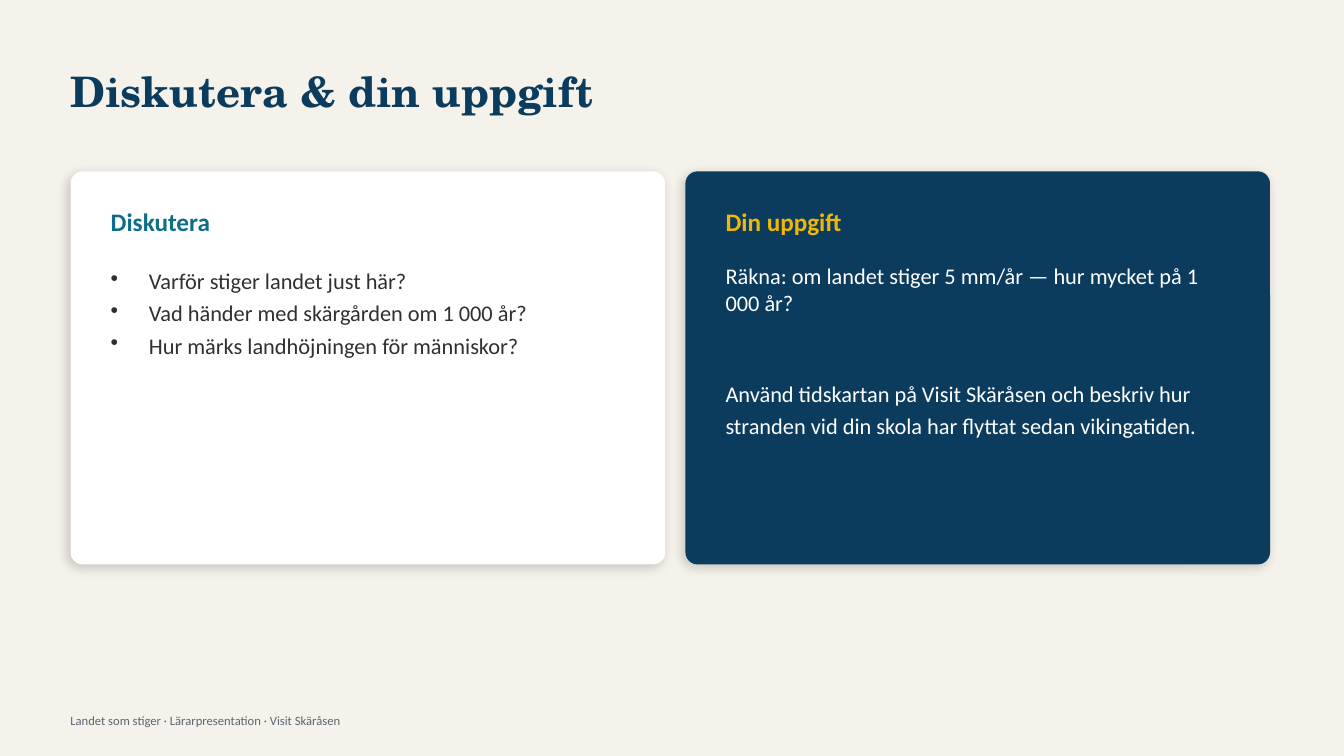
import pptx
import pptx.util
import pptx.dml.color
import pptx.enum.shapes
import pptx.enum.text
from lxml import etree
from pptx.oxml.ns import qn

Pt = pptx.util.Pt
MIDDLE = pptx.enum.text.MSO_ANCHOR.MIDDLE
TOP = pptx.enum.text.MSO_ANCHOR.TOP

COLORS = {
    "sand": "F5F2EB", "navy": "0B3C5D", "white": "FFFFFF", "teal": "0E6E8A",
    "ink": "2F3030", "yellow": "F2B705", "grey": "5B6573", "shadow": "000000",
}
BULLET_INDENT = 27.36


def color(name):
    return pptx.dml.color.RGBColor.from_string(COLORS[name])


def add_bullet(paragraph):
    properties = paragraph._p.get_or_add_pPr()
    properties.set("marL", str(Pt(BULLET_INDENT)))
    properties.set("indent", str(-Pt(BULLET_INDENT)))
    etree.SubElement(properties, qn("a:buChar"), char="•")


def add_text(slide, box, lines, size, color_name, font="Calibri", bold=False,
             anchor=MIDDLE, spacing=None, bullets=False):
    """Add a text box with one paragraph per line and return its paragraphs."""
    frame = slide.shapes.add_textbox(*map(Pt, box)).text_frame
    frame.word_wrap = True
    frame.vertical_anchor = anchor
    frame.text = "\n".join(lines)
    for paragraph in frame.paragraphs:
        if bullets:
            add_bullet(paragraph)
        if spacing:
            paragraph.line_spacing = spacing
        paragraph.font.name = font
        paragraph.font.size = Pt(size)
        paragraph.font.bold = bold
        paragraph.font.color.rgb = color(color_name)
    return frame.paragraphs


def add_soft_shadow(shape):
    shape.shadow.inherit = False
    effects = shape._element.spPr.find(qn("a:effectLst"))
    shadow = etree.SubElement(
        effects, qn("a:outerShdw"), blurRad=str(Pt(8)), dist=str(Pt(3)),
        dir=str(135 * 60000), algn="bl", rotWithShape="0")
    tint = etree.SubElement(shadow, qn("a:srgbClr"), val=COLORS["shadow"])
    etree.SubElement(tint, qn("a:alpha"), val="18000")


def add_card(slide, box, fill, heading, heading_color, lines, text_color,
             bullets=False):
    """Add a rounded card with a heading and body; return body paragraphs."""
    left, top, width, height = box
    card = slide.shapes.add_shape(
        pptx.enum.shapes.MSO_SHAPE.ROUNDED_RECTANGLE, *map(Pt, box))
    card.adjustments[0] = 0.031
    card.fill.solid()
    card.fill.fore_color.rgb = color(fill)
    card.line.fill.background()
    add_soft_shadow(card)

    inner_left, inner_width = left + 21.6, width - 43.2
    add_text(slide, (inner_left, top + 18, inner_width, 36), [heading],
             18, heading_color, bold=True)
    return add_text(slide, (inner_left, top + 61.2, inner_width, height - 75),
                    lines, 16, text_color, anchor=TOP, spacing=1.2,
                    bullets=bullets)


def add_discussion(slide, box):
    add_card(slide, box, "white", "Diskutera", "teal", [
        "Varför stiger landet just här?",
        "Vad händer med skärgården om 1 000 år?",
        "Hur märks landhöjningen för människor?",
    ], "ink", bullets=True)


def add_task(slide, box):
    calculation, shoreline = add_card(
        slide, box, "navy", "Din uppgift", "yellow", [
            "Räkna: om landet stiger 5 mm/år — hur mycket på 1 000 år?",
            "Använd tidskartan på Visit Skäråsen och beskriv hur stranden "
            "vid din skola har flyttat sedan vikingatiden.",
        ], "white")
    calculation.line_spacing = 1.0
    shoreline.space_before = Pt(42)


def main():
    presentation = pptx.Presentation()
    presentation.slide_width = Pt(960)
    presentation.slide_height = Pt(540)
    slide = presentation.slides.add_slide(presentation.slide_layouts[6])
    slide.background.fill.solid()
    slide.background.fill.fore_color.rgb = color("sand")

    # Title
    add_text(slide, (43.2, 32.4, 873.36, 64.8), ["Diskutera & din uppgift"],
             30, "navy", font="TeX Gyre Schola", bold=True)

    # Cards
    add_discussion(slide, (50.4, 122.4, 424.8, 280.8))
    add_task(slide, (489.6, 122.4, 417.6, 280.8))

    # Footer
    add_text(slide, (43.2, 504, 648, 21.6),
             ["Landet som stiger · Lärarpresentation · Visit Skäråsen"],
             9, "grey")

    presentation.save("out.pptx")


if __name__ == "__main__":
    main()
